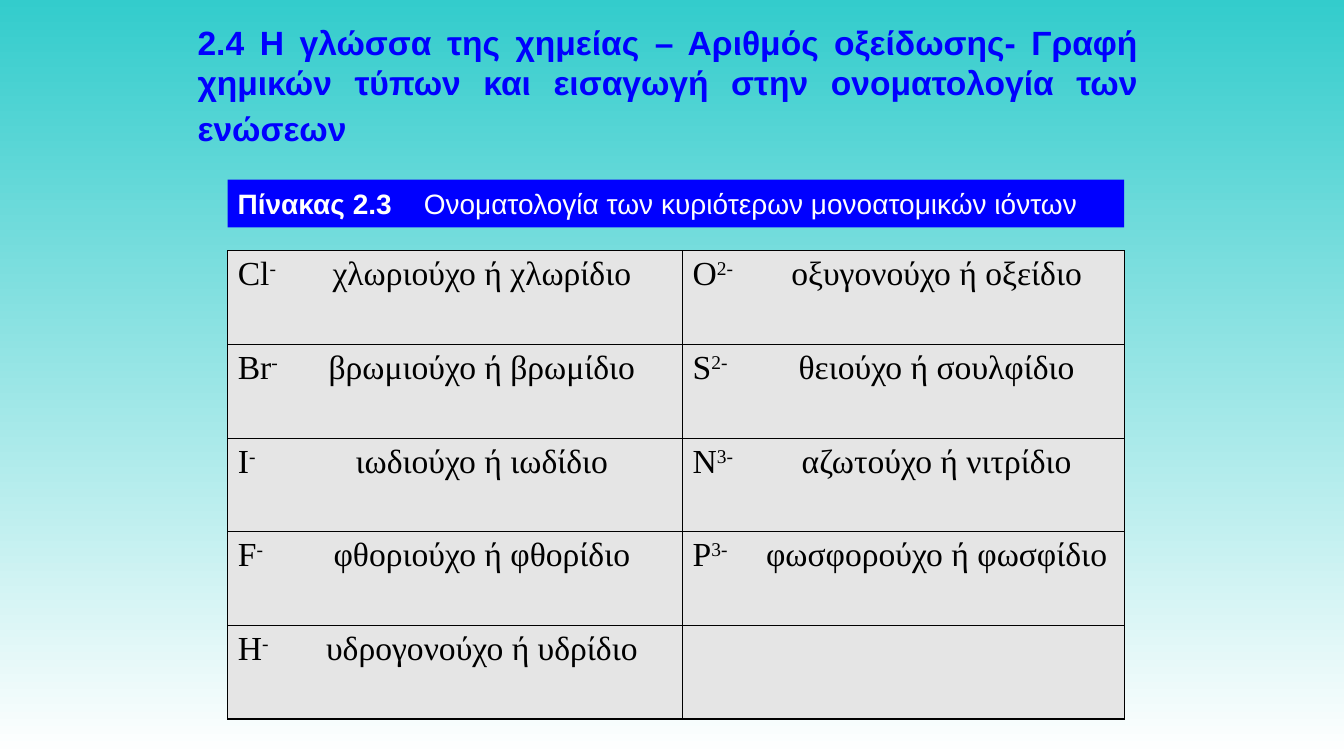
from dataclasses import dataclass

from lxml.etree import SubElement
from pptx import Presentation
from pptx.dml.color import RGBColor
from pptx.enum.shapes import MSO_SHAPE
from pptx.enum.text import MSO_ANCHOR, PP_ALIGN
from pptx.oxml.ns import qn
from pptx.util import Cm, Pt


@dataclass(frozen=True)
class Theme:
    sky: RGBColor = RGBColor(0x33, 0xCC, 0xCC)
    white: RGBColor = RGBColor(0xFF, 0xFF, 0xFF)
    blue: RGBColor = RGBColor(0x00, 0x00, 0xFF)
    black: RGBColor = RGBColor(0x00, 0x00, 0x00)
    grey: RGBColor = RGBColor(0xE5, 0xE5, 0xE5)
    heading_font: str = "Arial"
    ion_font: str = "Times New Roman"
    heading_size: Pt = Pt(24)
    heading_end_size: Pt = Pt(28)
    caption_size: Pt = Pt(20)
    ion_size: Pt = Pt(24)
    border: Pt = Pt(1)


theme = Theme()


def add_run(paragraph, text, font, size, color, bold=False):
    run = paragraph.add_run()
    run.text = text
    run.font.name = font
    run.font.size = size
    run.font.color.rgb = color
    run.font.bold = bold
    return run


def add_tab_stop(paragraph, position, alignment):
    """Set one tab stop; alignment is "l" or "ctr"."""
    tabs = SubElement(paragraph._p.get_or_add_pPr(), qn("a:tabLst"))
    SubElement(tabs, qn("a:tab"), pos=str(position), algn=alignment)


deck = Presentation()
deck.slide_width, deck.slide_height = Cm(33.87), Cm(19.05)
slide = deck.slides.add_slide(deck.slide_layouts[6])

backdrop = slide.background.fill
backdrop.gradient()
backdrop.gradient_angle = 270
for stop, color in zip(backdrop.gradient_stops, (theme.sky, theme.white)):
    stop.color.rgb = color

# Table of ions: symbol, charge, name
ion_rows = [
    [("Cl", "-", "χλωριούχο ή χλωρίδιο"), ("O", "2-", "οξυγονούχο ή οξείδιο")],
    [("Br", "-", "βρωμιούχο ή βρωμίδιο"), ("S", "2-", "θειούχο ή σουλφίδιο")],
    [("I", "-", "ιωδιούχο ή ιωδίδιο"), ("N", "3-", "αζωτούχο ή νιτρίδιο")],
    [("F", "-", "φθοριούχο ή φθορίδιο"), ("P", "3-", "φωσφορούχο ή φωσφίδιο")],
    [("H", "-", "υδρογονούχο ή υδρίδιο"), None],
]
left = Cm(5.74)
column_widths = (Cm(11.46), Cm(11.13))
row_height = Cm(2.36)
name_center = Cm(6.15)

ions = slide.shapes.add_table(
    len(ion_rows), 2, left, Cm(6.32), sum(column_widths), row_height * len(ion_rows)
).table
ions.first_row = ions.horz_banding = False
for column, width in zip(ions.columns, column_widths):
    column.width = width

for r, ion_row in enumerate(ion_rows):
    ions.rows[r].height = row_height
    for c, ion in enumerate(ion_row):
        cell = ions.cell(r, c)
        properties = cell._tc.get_or_add_tcPr()
        for side in ("a:lnL", "a:lnR", "a:lnT", "a:lnB"):
            line = SubElement(properties, qn(side), w=str(theme.border))
            paint = SubElement(line, qn("a:solidFill"))
            SubElement(paint, qn("a:srgbClr"), val=str(theme.black))
        cell.fill.solid()
        cell.fill.fore_color.rgb = theme.grey
        if ion is None:
            continue
        symbol, charge, name = ion
        entry = cell.text_frame.paragraphs[0]
        entry.alignment = PP_ALIGN.JUSTIFY
        add_tab_stop(entry, name_center, "ctr")
        style = (theme.ion_font, theme.ion_size, theme.black)
        add_run(entry, symbol, *style)
        superscript = add_run(entry, charge, *style)
        superscript.font._element.set("baseline", "30000")
        add_run(entry, "\t" + name, *style)

# Caption bar
caption = slide.shapes.add_shape(
    MSO_SHAPE.RECTANGLE, left, Cm(4.53), sum(column_widths), Cm(1.2)
)
caption.shadow.inherit = False
caption.fill.solid()
caption.fill.fore_color.rgb = theme.blue
caption.line.fill.background()
caption.text_frame.word_wrap = True
caption.text_frame.vertical_anchor = MSO_ANCHOR.MIDDLE
caption_text = caption.text_frame.paragraphs[0]
caption_text.alignment = PP_ALIGN.LEFT
add_tab_stop(caption_text, Cm(4.69), "l")
style = (theme.heading_font, theme.caption_size, theme.white)
add_run(caption_text, "Πίνακας 2.3", *style, bold=True)
add_run(caption_text, "\tΟνοματολογία των κυριότερων μονοατομικών ιόντων", *style)

# Heading
heading = slide.shapes.add_textbox(Cm(4.73), Cm(0.41), Cm(24.2), Cm(3.5)).text_frame
heading.word_wrap = True
heading.vertical_anchor = MSO_ANCHOR.MIDDLE
heading_text = heading.paragraphs[0]
heading_text.alignment = PP_ALIGN.JUSTIFY
add_run(
    heading_text,
    "2.4 Η γλώσσα της χημείας – Αριθμός οξείδωσης- Γραφή χημικών τύπων "
    "και εισαγωγή στην ονοματολογία των ενώσεων",
    theme.heading_font, theme.heading_size, theme.blue, bold=True,
)
add_run(heading_text, " ", theme.heading_font, theme.heading_end_size, theme.black)

deck.save("out.pptx")
